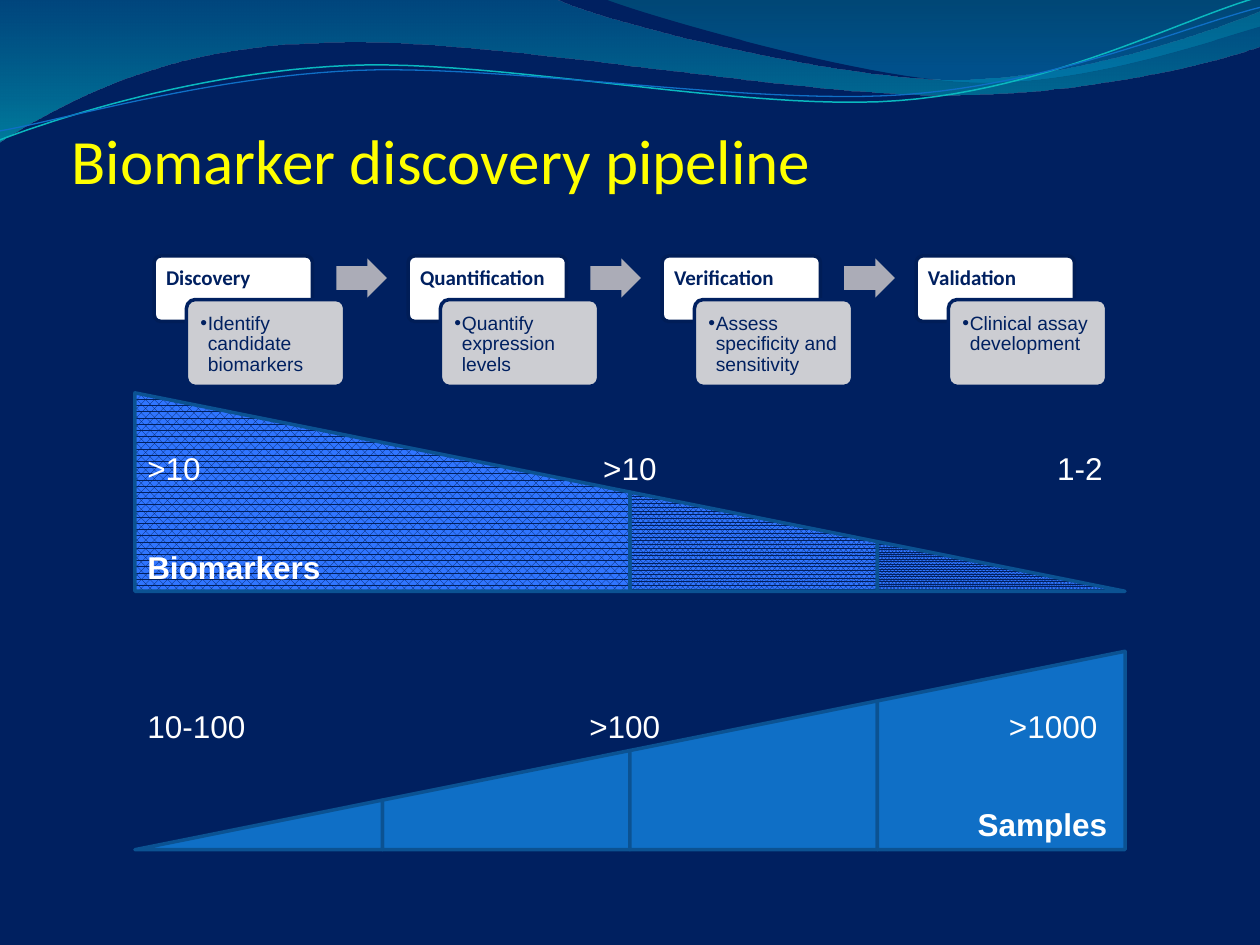
from lxml import etree
from pptx import Presentation
from pptx.dml.color import RGBColor
from pptx.enum.dml import MSO_PATTERN
from pptx.enum.shapes import MSO_SHAPE
from pptx.enum.text import MSO_ANCHOR, MSO_AUTO_SIZE, PP_ALIGN
from pptx.oxml.ns import qn
from pptx.util import Cm, Pt

ROUNDED = MSO_SHAPE.ROUNDED_RECTANGLE
ARROW = MSO_SHAPE.RIGHT_ARROW
TRIANGLE = MSO_SHAPE.ISOSCELES_TRIANGLE
DOTS_70 = MSO_PATTERN.PERCENT_70
DOTS_80 = MSO_PATTERN.PERCENT_80
DOTS_90 = MSO_PATTERN.PERCENT_90
TOP = MSO_ANCHOR.TOP
LEFT = PP_ALIGN.LEFT
GROW = MSO_AUTO_SIZE.SHAPE_TO_FIT_TEXT

COLORS = {
    "navy": "002060", "card edge": "001D57", "white": "FFFFFF", "yellow": "FFFF00",
    "card": "CCCDD2", "arrow": "ABACB7", "blue": "0F6FC6", "edge": "0B5292",
    "bright": "3075FF", "aqua": "0AB8BF", "wave top": "0074A1",
    "wave bottom": "00C6CF", "crest top": "00A1A9", "crest bottom": "008BBF",
}

# Each path is a start point followed by steps: one point for a straight
# line, three points for a Bezier curve.
WAVE = [
    (0, 0), [(11.18, -0.03)],
    [(12.09, 0.43), (16.87, 1.6), (19.25, 1.6)],
    [(21.67, 1.6), (24.33, 0.66), (25.4, 0.23)], [(25.43, 0.91)],
    [(24.97, 1.12), (22.1, 1.93), (18.95, 1.91)],
    [(15.8, 1.91), (9.7, 0.71), (6.53, 0.86)],
    [(3.28, 0.91), (1.17, 2.11), (-0.03, 2.87)],
]
CREST = [
    (12.17, -0.03), [(12.93, 0.28), (17.32, 1.57), (19.53, 1.65)],
    [(21.74, 1.75), (24.41, 0.81), (25.4, 0.53)], [(25.4, 0)],
]
AQUA_STRAND = [
    (0, 2.82), [(1.22, 2.36), (4.01, 1.45), (7.04, 1.32)],
    [(10.03, 1.19), (15.06, 2.26), (18.11, 2.03)],
    [(21.16, 1.8), (23.83, 0.38), (25.35, -0.05)],
]
BLUE_STRAND = [
    (0, 2.64), [(1.19, 2.44), (4.17, 1.55), (7.19, 1.42)],
    [(10.24, 1.3), (15.16, 2.13), (18.21, 1.91)],
    [(21.23, 1.7), (23.9, 0.53), (25.4, 0.15)],
]

STAGES = [
    ("Discovery", "Identify candidate biomarkers"),
    ("Quantification", "Quantify expression levels"),
    ("Verification", "Assess specificity and sensitivity"),
    ("Validation", "Clinical assay development"),
]
STAGE_LEFT, STAGE_STEP = 3.11, 5.12

WEDGE_LEFT, QUARTER, WEDGE_HEIGHT = 2.72, 4.99, 4
BIOMARKER_BASE, SAMPLE_BASE = 11.92, 17.13

LABELS = [
    ("Biomarkers", 2.72, 10.92, 4.19, True),
    ("Samples", 19.46, 16.1, 3.23, True),
    (">10", 2.72, 8.92, 1.91, False),
    (">10", 11.91, 8.92, 1.83, False),
    ("10-100", 2.72, 14.12, 2.62, False),
    ("1-2", 21.06, 8.92, 1.63, False),
    (">100", 11.63, 14.12, 2.13, False),
    (">1000", 20.09, 14.12, 2.59, False),
]


def color(name):
    return RGBColor.from_string(COLORS[name])


def flatten(path, steps=24):
    """Turn a path of lines and Bezier curves into a list of points."""
    points = [path[0]]
    for segment in path[1:]:
        if len(segment) == 1:
            points += segment
            continue
        corners = [points[-1], *segment]
        for step in range(1, steps + 1):
            t = step / steps
            weights = ((1 - t) ** 3, 3 * t * (1 - t) ** 2, 3 * t * t * (1 - t), t ** 3)
            points.append(tuple(
                sum(weight * corner[axis] for weight, corner in zip(weights, corners))
                for axis in (0, 1)))
    return points


def write(frame, text, font="Arial", size=18, ink="white", bold=False,
          insets=None, spacing=None, bullet_indent=None):
    frame.word_wrap = True
    frame.vertical_anchor = TOP
    if insets:
        (frame.margin_left, frame.margin_top,
         frame.margin_right, frame.margin_bottom) = map(Cm, insets)
    para = frame.paragraphs[0]
    para.alignment = LEFT
    if spacing:
        para.line_spacing = spacing
    if bullet_indent:
        para.level = 1
        properties = para._p.get_or_add_pPr()
        properties.set("marL", str(Cm(bullet_indent)))
        properties.set("indent", str(-Cm(bullet_indent)))
        etree.SubElement(properties, qn("a:buFont")).set("typeface", font)
        etree.SubElement(properties, qn("a:buChar")).set("char", "•")
    span = para.add_run()
    span.text = text
    span.font.name, span.font.size, span.font.bold = font, Pt(size), bold
    span.font.color.rgb = color(ink)


class Page:
    def __init__(self, deck, background):
        self.slide = deck.slides.add_slide(deck.slide_layouts[6])
        self.shapes = self.slide.shapes
        self.slide.background.fill.solid()
        self.slide.background.fill.fore_color.rgb = color(background)

    def style(self, shape, fill=None, pattern=None, line=None, width=2):
        shape.shadow.inherit = False
        if pattern:
            shape.fill.patterned()
            shape.fill.pattern = pattern
            shape.fill.fore_color.rgb = color("navy")
            shape.fill.back_color.rgb = color("bright")
        elif fill:
            shape.fill.solid()
            shape.fill.fore_color.rgb = color(fill)
        else:
            shape.fill.background()
        if line:
            shape.line.color.rgb = color(line)
            shape.line.width = Pt(width)
        else:
            shape.line.fill.background()
        return shape

    def outline(self, points, close=True, **look):
        (first, *rest) = [(Cm(x), Cm(y)) for x, y in points]
        builder = self.shapes.build_freeform(*first)
        builder.add_line_segments(rest, close=close)
        return self.style(builder.convert_to_shape(), **look)

    def preset(self, kind, left, top, width, height, adjust, **look):
        shape = self.shapes.add_shape(kind, Cm(left), Cm(top), Cm(width), Cm(height))
        for index, value in enumerate(adjust):
            shape.adjustments[index] = value
        return self.style(shape, **look)

    def gradient_wave(self, path, stops):
        """Stops are (position, colour, opacity), from top to bottom."""
        shape = self.outline(flatten(path))
        shape.fill.gradient()
        shape.fill.gradient_angle = 270
        for stop, (position, name, _) in zip(shape.fill.gradient_stops, stops):
            stop.position = position
            stop.color.rgb = color(name)
        nodes = shape._element.spPr.iter(qn("a:srgbClr"))
        for node, (_, _, opacity) in zip(nodes, stops):
            etree.SubElement(node, qn("a:alpha")).set("val", str(opacity * 1000))

    def label(self, text, left, top, width, height=1.02, **form):
        box = self.shapes.add_textbox(Cm(left), Cm(top), Cm(width), Cm(height))
        write(box.text_frame, text, **form)
        box.text_frame.auto_size = GROW

    def stage(self, left, heading, detail):
        head = self.preset(ROUNDED, left, 5.16, 3.19, 1.32, [0.1],
                           fill="white", line="card edge")
        write(head.text_frame, heading, font="Calibri", size=12, ink="navy", bold=True,
              insets=(0.2, 0.2, 0.2, 0.52), spacing=0.9)
        card = self.preset(ROUNDED, left + 0.65, 6.04, 3.19, 1.75, [0.1],
                           fill="card", line="navy")
        write(card.text_frame, detail, size=11, ink="navy", insets=[0.23] * 4,
              spacing=0.9, bullet_indent=0.15)

    def wedge_slice(self, start, end, base, rising, **look):
        """Draw the part of a wedge between two quarter marks."""
        left, right = (WEDGE_LEFT + mark * QUARTER for mark in (start, end))
        heights = [WEDGE_HEIGHT * (mark if rising else 4 - mark) / 4
                   for mark in (start, end)]
        if 0 in heights:
            peak = max(heights)
            tip = self.preset(TRIANGLE, left, base - peak, right - left, peak, [1],
                              line="edge", **look)
            if not rising:
                tip._element.spPr.xfrm.set("flipH", "1")
            return
        self.outline([(left, base - heights[0]), (right, base - heights[1]),
                      (right, base), (left, base)], line="edge", **look)


def main():
    deck = Presentation()
    deck.slide_width, deck.slide_height = Cm(25.4), Cm(19.05)
    page = Page(deck, "navy")

    page.gradient_wave(WAVE, [(0, "wave top", 45), (1, "wave bottom", 55)])
    page.gradient_wave(CREST, [(0, "crest top", 30), (0.8, "crest bottom", 45)])
    page.outline(flatten(AQUA_STRAND), close=False, line="aqua", width=0.85)
    page.outline(flatten(BLUE_STRAND), close=False, line="blue", width=0.75)
    page.label("Biomarker discovery pipeline", 1.19, 2.32, 15.72, 1.8,
               font="Calibri", size=36, ink="yellow")

    for start in (1, 2, 3, 0):
        page.wedge_slice(start, start + 1, SAMPLE_BASE, True, fill="blue")
    for start, end, pattern in [(2, 3, DOTS_80), (0, 2, DOTS_70), (3, 4, DOTS_90)]:
        page.wedge_slice(start, end, BIOMARKER_BASE, False, pattern=pattern)

    for index, (heading, detail) in enumerate(STAGES):
        left = STAGE_LEFT + index * STAGE_STEP
        page.stage(left, heading, detail)
        if index < len(STAGES) - 1:
            page.preset(ARROW, left + 3.67, 5.21, 1.02, 0.79, [0.6, 0.5], fill="arrow")

    for text, left, top, width, bold in LABELS:
        page.label(text, left, top, width, bold=bold)

    deck.save("out.pptx")


if __name__ == "__main__":
    main()
